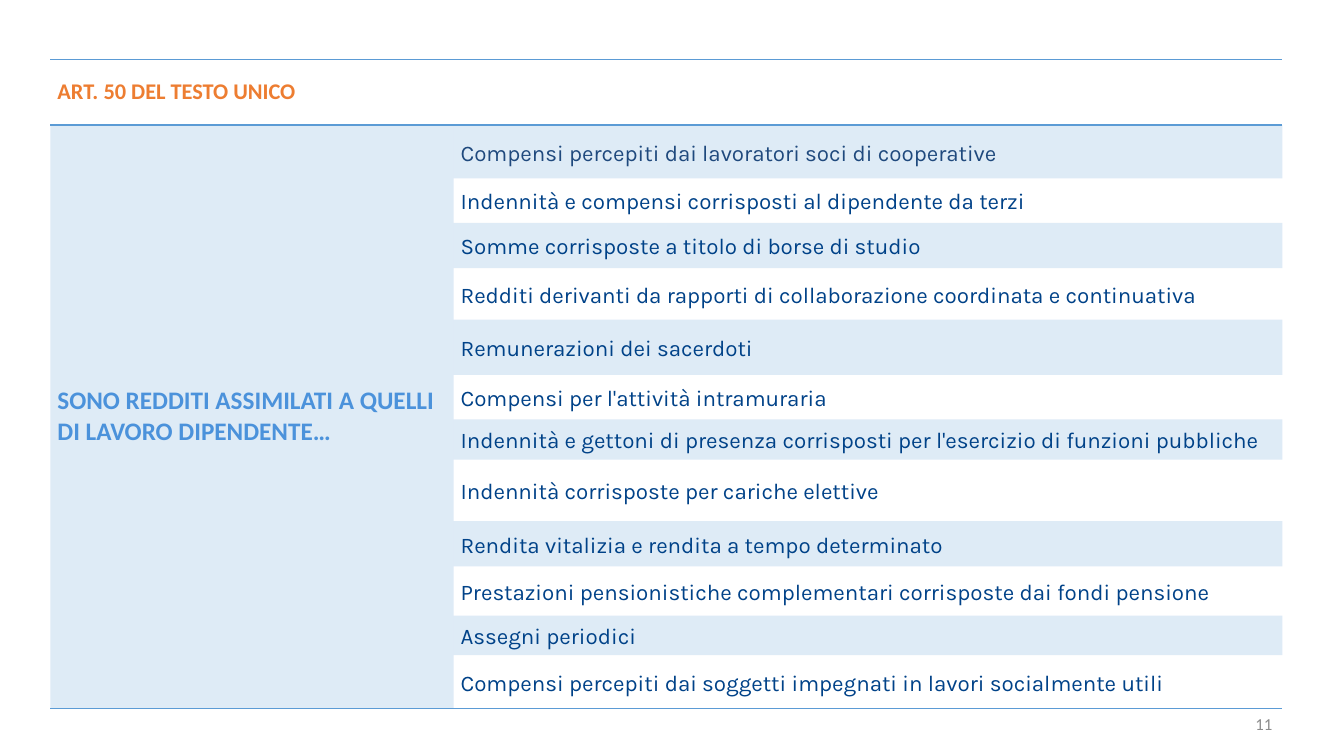
import pptx
import pptx.util
import pptx.dml.color
import pptx.enum.text
import pptx.oxml
import pptx.oxml.ns

COLORS = {
    "heading": "ED7D31",
    "lead": "4B92DB",
    "first": "1F497D",
    "item": "004288",
    "accent": "5B9BD5",
    "page": "8C8C8C",
}
ALIGN = pptx.enum.text.PP_ALIGN
MIDDLE = pptx.enum.text.MSO_ANCHOR.MIDDLE
NO_GRID_STYLE = "{2D5ABB26-0587-4C30-8999-92F81FD0307C}"

INCOME_TYPES = [
    "Compensi percepiti dai lavoratori soci di cooperative",
    "Indennità e compensi corrisposti al dipendente da terzi",
    "Somme corrisposte a titolo di borse di studio",
    "Redditi derivanti da rapporti di collaborazione coordinata e continuativa",
    "Remunerazioni dei sacerdoti",
    "Compensi per l'attività intramuraria",
    "Indennità e gettoni di presenza corrisposti per l'esercizio di funzioni pubbliche",
    "Indennità corrisposte per cariche elettive",
    "Rendita vitalizia e rendita a tempo determinato",
    "Prestazioni pensionistiche complementari corrisposte dai fondi pensione",
    "Assegni periodici",
    "Compensi percepiti dai soggetti impegnati in lavori socialmente utili",
]
# Percent of slide width and height
COLUMN_WIDTHS = [30, 61.67]
ROW_HEIGHTS = [8.67, 7.07, 5.87, 6, 6.8, 7.33, 5.87, 5.33, 8.13, 6, 6.53, 5.2, 7.07]


class Page:
    """Holds the style and the slide; lengths are percentages of its size."""

    def __init__(self, deck):
        self.width, self.height = deck.slide_width, deck.slide_height
        self.slide = deck.slides.add_slide(deck.slide_layouts[6])

    def across(self, percent):
        return round(self.width * percent / 100)

    def down(self, percent):
        return round(self.height * percent / 100)

    def set_words(self, frame, words, color, size, font="Calibri", bold=False,
                  align=ALIGN.LEFT, spacing=1.0):
        frame.text = words
        paragraph = frame.paragraphs[0]
        paragraph.alignment = align
        paragraph.line_spacing = spacing
        style = paragraph.runs[0].font
        style.name, style.size, style.bold = font, pptx.util.Pt(size), bold
        style.color.rgb = pptx.dml.color.RGBColor.from_string(COLORS[color])

    def text(self, left, top, width, height, words, **style):
        frame = self.slide.shapes.add_textbox(
            self.across(left), self.down(top), self.across(width), self.down(height)
        ).text_frame
        frame.word_wrap = True
        frame.vertical_anchor = MIDDLE
        self.set_words(frame, words, **style)

    def table(self, left, top, widths, heights):
        grid = self.slide.shapes.add_table(
            len(heights), len(widths), self.across(left), self.down(top),
            self.across(sum(widths)), self.down(sum(heights))).table
        grid.first_row = grid.horz_banding = False
        grid._tbl.tblPr.find(pptx.oxml.ns.qn("a:tableStyleId")).text = NO_GRID_STYLE
        for column, width in zip(grid.columns, widths):
            column.width = self.across(width)
        for row, height in zip(grid.rows, heights):
            row.height = self.down(height)
        for cell in grid.iter_cells():
            cell.margin_left = cell.margin_right = pptx.util.Inches(0.07)
            cell.margin_top = cell.margin_bottom = 0
            cell.vertical_anchor = MIDDLE
            cell.fill.background()
        return grid

    def tint(self, cell):
        cell.fill.solid()
        cell.fill.fore_color.rgb = pptx.dml.color.RGBColor.from_string(COLORS["accent"])
        shade = cell._tc.tcPr.find(".//" + pptx.oxml.ns.qn("a:srgbClr"))
        shade.append(pptx.oxml.parse_xml(
            f'<a:alpha {pptx.oxml.ns.nsdecls("a")} val="20000"/>'))

    def rule(self, cell, *sides):
        for position, side in enumerate(sides):
            cell._tc.tcPr.insert(position, pptx.oxml.parse_xml(
                f'<a:ln{side} {pptx.oxml.ns.nsdecls("a")} w="12700"><a:solidFill>'
                f'<a:srgbClr val="{COLORS["accent"]}"/></a:solidFill></a:ln{side}>'))


def main():
    deck = pptx.Presentation()
    deck.slide_width = pptx.util.Inches(13.33)
    deck.slide_height = pptx.util.Inches(7.5)
    page = Page(deck)

    # Page number
    page.text(72.92, 93.07, 22.5, 5.33, "11", color="page", size=12, align=ALIGN.RIGHT)

    # Heading row
    incomes = page.table(3.75, 7.87, COLUMN_WIDTHS, ROW_HEIGHTS)
    page.set_words(incomes.cell(0, 0).text_frame, "ART. 50 DEL TESTO UNICO",
                   color="heading", size=16, bold=True)

    # Lead-in spanning all income rows
    last = len(INCOME_TYPES)
    lead = incomes.cell(1, 0)
    lead.merge(incomes.cell(last, 0))
    page.set_words(lead.text_frame, "SONO REDDITI ASSIMILATI A QUELLI DI LAVORO DIPENDENTE…",
                   color="lead", size=18, bold=True)
    page.tint(lead)

    # Income types, every other one tinted
    for row, income in enumerate(INCOME_TYPES, start=1):
        cell = incomes.cell(row, 1)
        page.set_words(cell.text_frame, income, color="first" if row == 1 else "item",
                       size=16, font="Karla", align=ALIGN.JUSTIFY, spacing=1.15)
        if row % 2:
            page.tint(cell)

    # Rules above and below the heading, and at the foot
    for column in range(len(COLUMN_WIDTHS)):
        page.rule(incomes.cell(0, column), "T", "B")
        page.rule(incomes.cell(last, column), "B")
    page.rule(lead, "B")

    deck.save("out.pptx")


if __name__ == "__main__":
    main()
